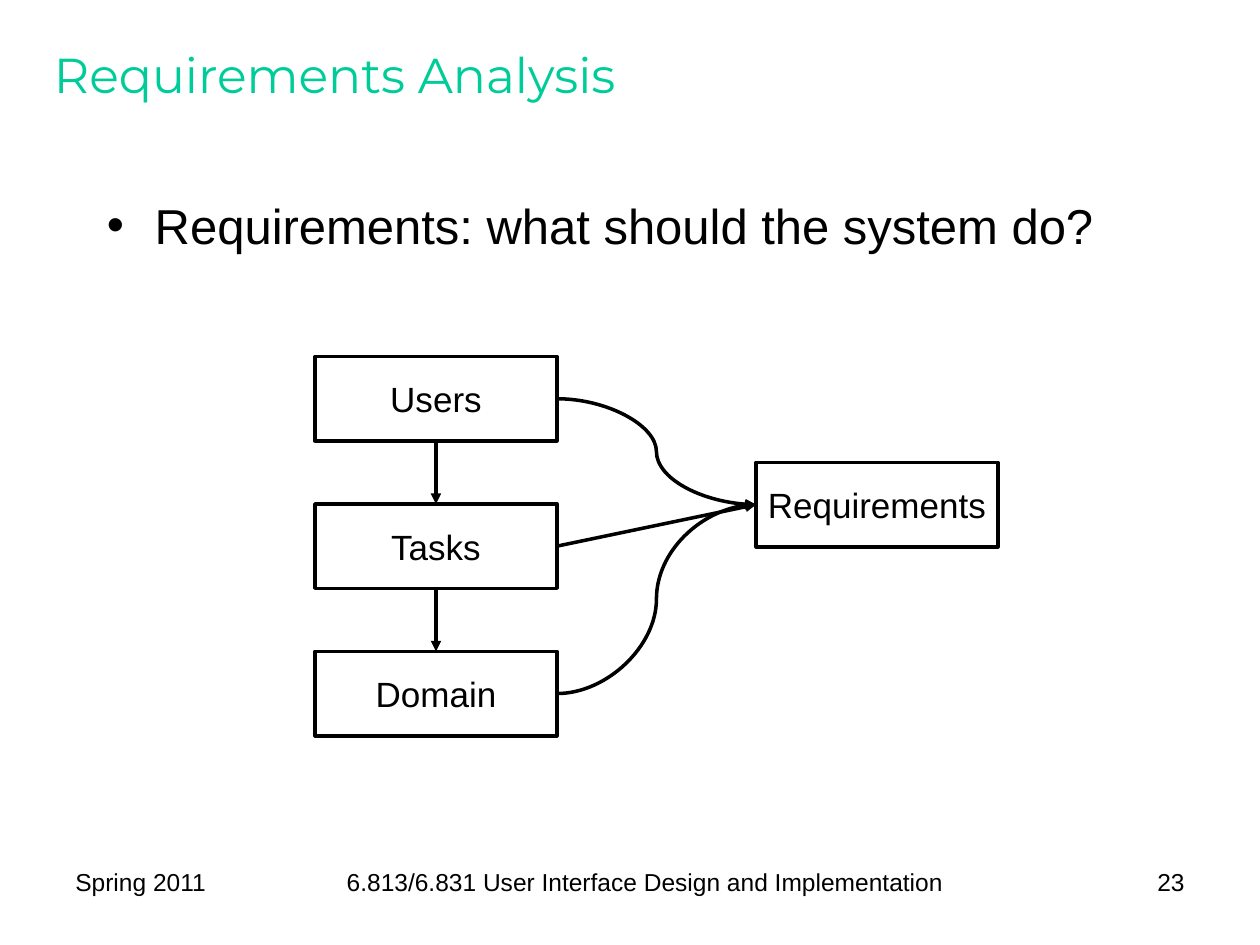
"""Build the Requirements Analysis slide."""
from lxml.etree import SubElement
from pptx import Presentation
from pptx.dml.color import RGBColor
from pptx.enum.shapes import MSO_CONNECTOR, MSO_SHAPE
from pptx.enum.text import MSO_ANCHOR, PP_ALIGN
from pptx.oxml.ns import qn
from pptx.util import Inches, Pt

BLACK = RGBColor(0, 0, 0)
WHITE = RGBColor(255, 255, 255)
GREEN = RGBColor(0, 0xCC, 0x99)

TITLE = "Requirements Analysis"
BULLET = "Requirements: what should the system do?"
FOOTER = [
    ("Spring 2011", 0.5, 1.5, PP_ALIGN.LEFT),
    ("6.813/6.831 User Interface Design and Implementation", 2.08, 6.08, PP_ALIGN.CENTER),
    ("23", 8.25, 1.25, PP_ALIGN.RIGHT),
]
SOURCES = ["Users", "Tasks", "Domain"]
TARGET = "Requirements"
BOX_W, BOX_H = 1.92, 0.67
SOURCE_X, SOURCE_Y, STEP = 2.5, 2.83, 1.17
TARGET_X, TARGET_Y = 6, 3.67
TOP, LEFT, BOTTOM, RIGHT = range(4)


def write(sp, text, size, align=PP_ALIGN.LEFT, font="Arial", color=BLACK):
    p = sp.text_frame.paragraphs[0]
    p.alignment = align
    r = p.add_run()
    r.text = text
    r.font.size = Pt(size)
    r.font.name = font
    r.font.color.rgb = color
    return p


def add_text(s, x, y, w, h, text, size, **style):
    sp = s.shapes.add_textbox(Inches(x), Inches(y), Inches(w), Inches(h))
    sp.text_frame.word_wrap = True
    return sp, write(sp, text, size, **style)


def add_box(s, x, y, text):
    sp = s.shapes.add_shape(
        MSO_SHAPE.RECTANGLE, Inches(x), Inches(y), Inches(BOX_W), Inches(BOX_H))
    sp.shadow.inherit = False
    sp.fill.solid()
    sp.fill.fore_color.rgb = WHITE
    sp.line.color.rgb = BLACK
    sp.line.width = Pt(2)
    sp.text_frame.word_wrap = False
    sp.text_frame.vertical_anchor = MSO_ANCHOR.MIDDLE
    write(sp, text, 20, PP_ALIGN.CENTER)
    return sp


def add_arrow(s, start, start_side, end, end_side, kind=MSO_CONNECTOR.STRAIGHT):
    c = s.shapes.add_connector(kind, 0, 0, 0, 0)
    c.begin_connect(start, start_side)
    c.end_connect(end, end_side)
    c.line.color.rgb = BLACK
    c.line.width = Pt(2)
    SubElement(c.line._get_or_add_ln(), qn("a:tailEnd"), type="triangle")
    SubElement(c._element.spPr, qn("a:effectLst"))


def main():
    prs = Presentation()
    prs.slide_width, prs.slide_height = Inches(10), Inches(7.5)
    s = prs.slides.add_slide(prs.slide_layouts[6])

    title, _ = add_text(s, 0.33, 0.17, 9.25, 0.83, TITLE, 28, font="Montserrat", color=GREEN)
    title.text_frame.vertical_anchor = MSO_ANCHOR.MIDDLE

    _, p = add_text(s, 0.75, 1.5, 8.5, 5.17, BULLET, 28)
    p.space_before = Pt(5.6)
    pPr = p._p.get_or_add_pPr()
    pPr.set("marL", str(Inches(0.38)))
    pPr.set("indent", str(-Inches(0.38)))
    SubElement(pPr, qn("a:buFont"), typeface="Arial")
    SubElement(pPr, qn("a:buChar"), char="•")

    for text, x, w, align in FOOTER:
        add_text(s, x, 6.83, w, 0.52, text, 14, align=align)

    target = add_box(s, TARGET_X, TARGET_Y, TARGET)
    boxes = [add_box(s, SOURCE_X, SOURCE_Y + i * STEP, text)
             for i, text in enumerate(SOURCES)]
    kinds = [MSO_CONNECTOR.CURVE, MSO_CONNECTOR.STRAIGHT, MSO_CONNECTOR.CURVE]
    for box, kind in zip(boxes, kinds):
        add_arrow(s, box, RIGHT, target, LEFT, kind)
    for upper, lower in zip(boxes, boxes[1:]):
        add_arrow(s, upper, BOTTOM, lower, TOP)

    prs.save("out.pptx")


if __name__ == "__main__":
    main()
